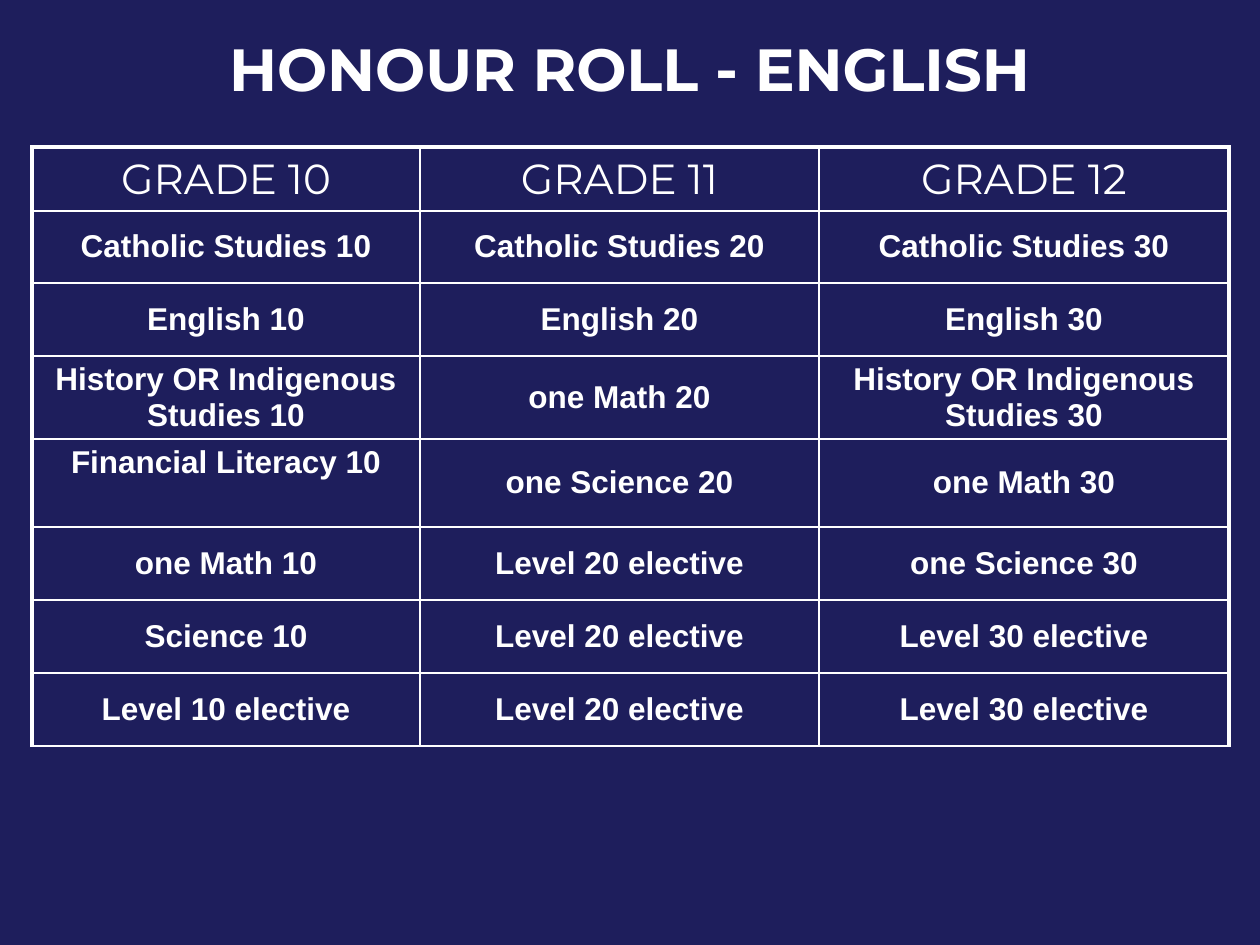
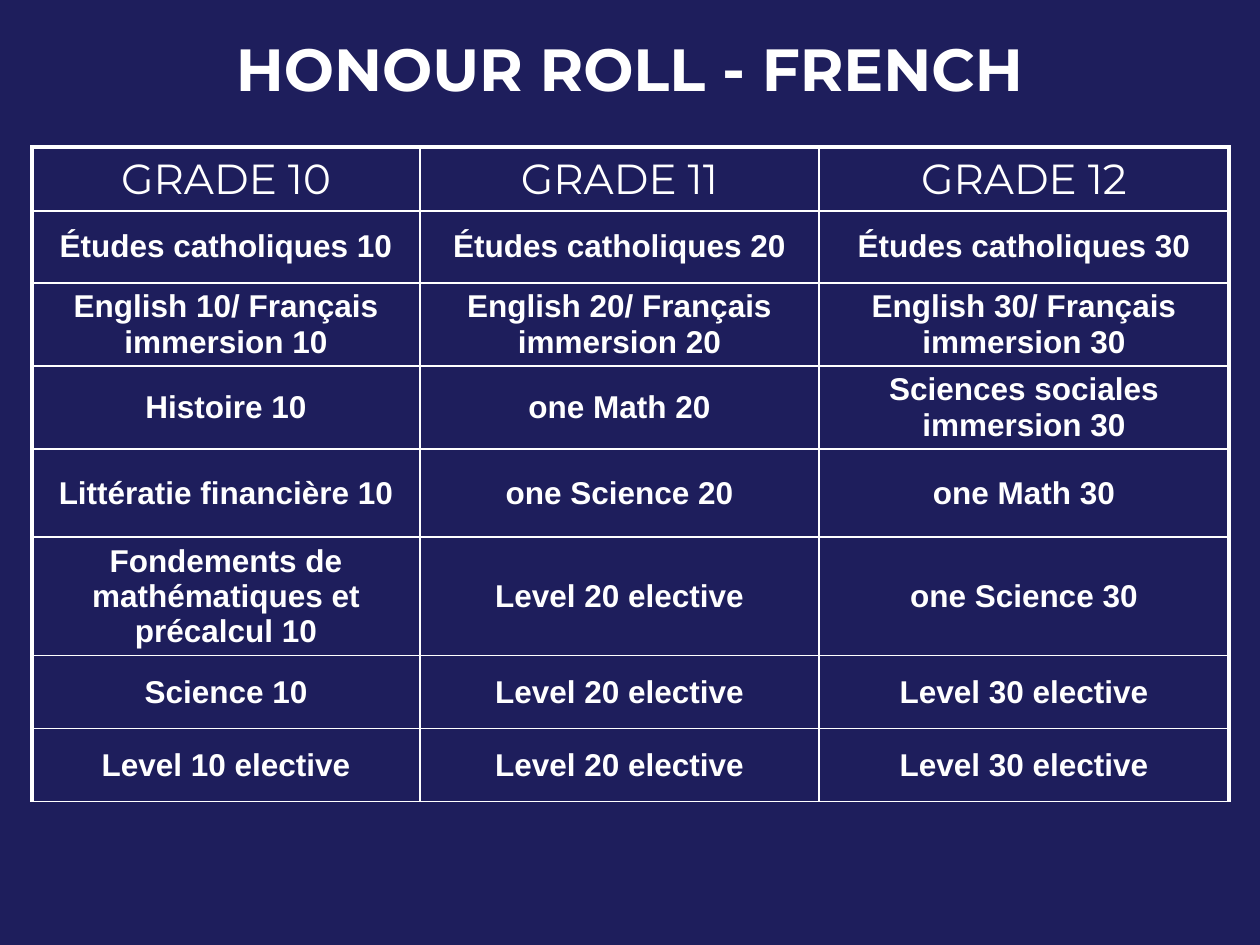
import pptx
import pptx.util
import pptx.dml.color
import pptx.enum.text
import pptx.oxml
import pptx.oxml.ns

NAVY = pptx.dml.color.RGBColor(0x1E, 0x1E, 0x5C)
WHITE = pptx.dml.color.RGBColor(0xFF, 0xFF, 0xFF)
MIDDLE = pptx.enum.text.MSO_ANCHOR.MIDDLE
TOP = pptx.enum.text.MSO_ANCHOR.TOP
SCALE = 914400 / 126  # EMU in one px
THIN, THICK = 1, 2.25

COLS = [388, 399, 410]
ROWS = [63, 72, 73, 76, 88, 73, 73, 73]
GRADES = ["GRADE 10", "GRADE 11", "GRADE 12"]

# Title, table height, then one row of courses per line
ROLLS = [
    ("HONOUR ROLL - ENGLISH", 612, [
        ["Catholic Studies 10", "Catholic Studies 20", "Catholic Studies 30"],
        ["English 10", "English 20", "English 30"],
        ["History OR Indigenous Studies 10", "one Math 20",
         "History OR Indigenous Studies 30"],
        ["Financial Literacy 10", "one Science 20", "one Math 30"],
        ["one Math 10", "Level 20 elective", "one Science 30"],
        ["Science 10", "Level 20 elective", "Level 30 elective"],
        ["Level 10 elective", "Level 20 elective", "Level 30 elective"],
    ]),
    ("HONOUR ROLL - FRENCH", 672, [
        ["Études catholiques 10", "Études catholiques 20",
         "Études catholiques 30"],
        ["English 10/ Français immersion 10",
         "English 20/ Français immersion 20",
         "English 30/ Français immersion 30"],
        ["Histoire 10", "one Math 20", "Sciences sociales immersion 30"],
        ["Littératie financière 10", "one Science 20", "one Math 30"],
        ["Fondements de mathématiques et précalcul 10", "Level 20 elective",
         "one Science 30"],
        ["Science 10", "Level 20 elective", "Level 30 elective"],
        ["Level 10 elective", "Level 20 elective", "Level 30 elective"],
    ]),
]


def px(count):
    return pptx.util.Emu(round(count * SCALE))


def write(frame, text, size=18, font="Arial", bold=True, space=1.0):
    para = frame.paragraphs[0]
    para.alignment = pptx.enum.text.PP_ALIGN.CENTER
    para.line_spacing = space
    run = para.add_run()
    run.text = text
    run.font.size = pptx.util.Pt(size)
    run.font.name = font
    run.font.bold = bold
    run.font.color.rgb = WHITE


deck = pptx.Presentation()
deck.slide_width, deck.slide_height = px(1260), px(945)

# Shared background
back = deck.slide_master.background.fill
back.solid()
back.fore_color.rgb = NAVY

for name, high, courses in ROLLS:
    slide = deck.slides.add_slide(deck.slide_layouts[5])

    # Title
    title = slide.shapes.title
    title.left, title.top = px(94), px(14)
    title.width, title.height = px(1071), px(116)
    title.text_frame.vertical_anchor = MIDDLE
    title.text_frame.auto_size = pptx.enum.text.MSO_AUTO_SIZE.NONE
    write(title.text_frame, name, size=34, font="Montserrat", space=0.9)

    # Table grid
    holder = slide.shapes.add_table(len(ROWS), len(COLS), px(32), px(147),
                                    px(sum(COLS)), px(high))
    table = holder.table
    table.first_row = table.horz_banding = False
    for col, wide in zip(table.columns, COLS):
        col.width = px(wide)
    for row, tall in zip(table.rows, ROWS):
        row.height = px(tall)
    holder.height = px(high)

    # Cells and borders
    for r, texts in enumerate([GRADES] + courses):
        for c, text in enumerate(texts):
            cell = table.cell(r, c)
            cell.fill.background()
            cell.vertical_anchor = MIDDLE
            if text == "Financial Literacy 10":
                cell.vertical_anchor = TOP
            if r == 0:
                write(cell.text_frame, text, size=24, font="Montserrat",
                      bold=False)
            else:
                write(cell.text_frame, text)

            edges = {"L": c == 0, "R": c == len(COLS) - 1, "T": r == 0,
                     "B": False}
            props = cell._tc.get_or_add_tcPr()
            for spot, (side, outer) in enumerate(edges.items()):
                width = pptx.util.Pt(THICK if outer else THIN)
                props.insert(spot, pptx.oxml.parse_xml(
                    f'<a:ln{side} {pptx.oxml.ns.nsdecls("a")} w="{width}">'
                    f'<a:solidFill><a:srgbClr val="{WHITE}"/></a:solidFill>'
                    f'</a:ln{side}>'))

deck.save("out.pptx")
